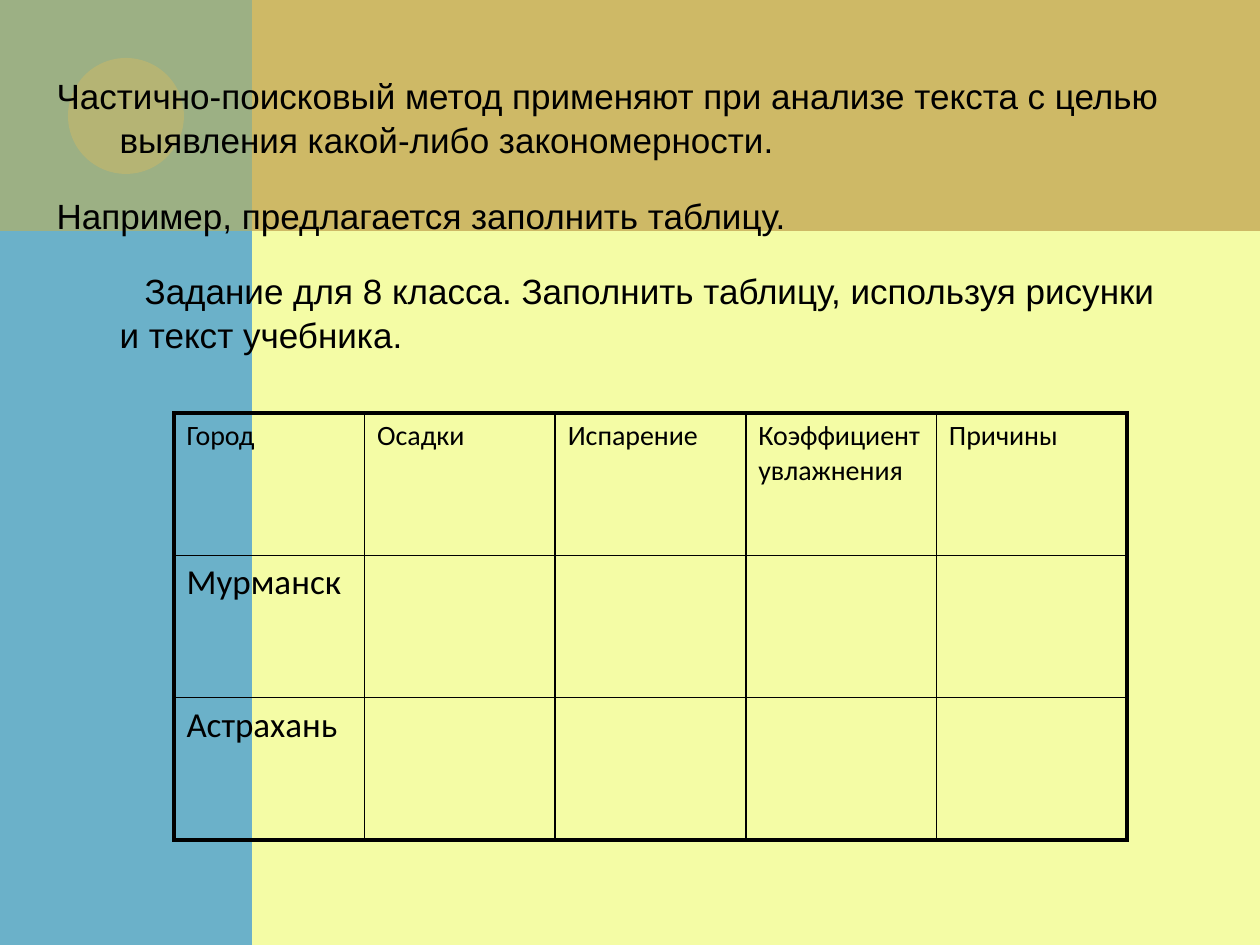
import pptx
import pptx.util
import pptx.dml.color
import pptx.enum.shapes
import pptx.enum.text
import pptx.oxml
import pptx.oxml.ns

EMU_PER_PX = 914400 // 126
BLACK = "000000"
SHAPES = pptx.enum.shapes.MSO_SHAPE

BACKDROP = [
    (SHAPES.RECTANGLE, (63, 0, 1197, 231), "CEB966", 100),
    (SHAPES.RECTANGLE, (0, 0, 252, 945), "6BB1C9", 100),
    (SHAPES.RECTANGLE, (0, 0, 252, 231), "9CB084", 100),
    (SHAPES.OVAL, (68, 58, 116, 116), "CEB966", 50),
]
# Text, first-line indent in px
METHOD_TEXT = [
    ("Частично-поисковый метод применяют при анализе текста с целью "
     "выявления какой-либо закономерности.", -63),
    ("Например, предлагается заполнить таблицу.", -63),
    ("Задание для 8 класса. Заполнить таблицу, используя рисунки "
     "и текст учебника.", 25),
]
HEADINGS = ["Город", "Осадки", "Испарение", "Коэффициент увлажнения", "Причины"]
CITIES = ["Мурманск", "Астрахань"]


def px(length):
    return pptx.util.Emu(length * EMU_PER_PX)


def box(bounds):
    return [px(length) for length in bounds]


def colour(hex_code):
    return pptx.dml.color.RGBColor.from_string(hex_code)


def apply(target, values):
    for name, value in values.items():
        setattr(target, name, value)


def write(paragraph, text, font_name, size):
    run = paragraph.add_run()
    run.text = text
    apply(run.font, {"name": font_name, "size": pptx.util.Pt(size), "bold": False})
    run.font.color.rgb = colour(BLACK)


def add_backdrop(slide):
    """Put the coloured panels behind everything else."""
    group = slide.shapes.add_group_shape()
    for kind, bounds, fill, opacity in BACKDROP:
        panel = group.shapes.add_shape(kind, *box(bounds))
        panel.shadow.inherit = False
        panel.fill.solid()
        panel.fill.fore_color.rgb = colour(fill)
        panel.line.fill.background()
        if opacity < 100:
            tint = panel._element.spPr.find(".//" + pptx.oxml.ns.qn("a:srgbClr"))
            alpha = pptx.oxml.parse_xml(
                f'<a:alpha {pptx.oxml.ns.nsdecls("a")} val="{opacity * 1000}"/>')
            tint.append(alpha)
    slide.shapes._spTree.insert(2, group._element)


def fill_body(body):
    position = box((44, 66, 1150, 268))
    apply(body, dict(zip(("left", "top", "width", "height"), position)))
    frame = body.text_frame
    apply(frame, {"word_wrap": True,
                  "auto_size": pptx.enum.text.MSO_AUTO_SIZE.NONE})
    for index, (text, indent) in enumerate(METHOD_TEXT):
        paragraph = frame.add_paragraph() if index else frame.paragraphs[0]
        apply(paragraph, {"space_before": pptx.util.Pt(18), "line_spacing": 1.05})
        properties = paragraph._p.get_or_add_pPr()
        properties.set("marL", str(px(63)))
        properties.set("indent", str(px(indent)))
        properties.append(pptx.oxml.parse_xml(
            f'<a:buNone {pptx.oxml.ns.nsdecls("a")}/>'))
        write(paragraph, text, "Arial", 20)


def set_borders(cell, widths):
    """Draw black cell edges; widths maps L, R, T, B to points."""
    properties = cell._tc.get_or_add_tcPr()
    for index, (side, points) in enumerate(widths.items()):
        properties.insert(index, pptx.oxml.parse_xml(
            f'<a:ln{side} {pptx.oxml.ns.nsdecls("a")} w="{pptx.util.Pt(points)}">'
            f'<a:solidFill><a:srgbClr val="{BLACK}"/></a:solidFill></a:ln{side}>'))


def add_city_table(slide):
    rows = [HEADINGS] + [[city] + [""] * (len(HEADINGS) - 1) for city in CITIES]
    last_row, last_column = len(rows) - 1, len(HEADINGS) - 1
    table = slide.shapes.add_table(
        len(rows), len(HEADINGS), *box((174, 413, 953, 427))).table
    apply(table, {"first_row": False, "horz_banding": False})
    for r, row in enumerate(rows):
        for c, text in enumerate(row):
            cell = table.cell(r, c)
            cell.fill.background()
            outer = {"L": c == 0, "R": c == last_column,
                     "T": r == 0, "B": r == last_row}
            set_borders(cell, {side: 2.25 if edge else 1
                               for side, edge in outer.items()})
            if text:
                paragraph = cell.text_frame.paragraphs[0]
                paragraph.space_before = pptx.util.Pt(18)
                write(paragraph, text, "Calibri", 20 if r else 16)


def main():
    deck = pptx.Presentation()
    apply(deck, {"slide_width": px(1260), "slide_height": px(945)})
    slide = deck.slides.add_slide(deck.slide_layouts[1])
    slide.background.fill.solid()
    slide.background.fill.fore_color.rgb = colour("F4FCA5")
    title = slide.shapes.title._element
    title.getparent().remove(title)
    add_backdrop(slide)
    fill_body(slide.placeholders[1])
    add_city_table(slide)
    deck.save("out.pptx")


if __name__ == "__main__":
    main()
